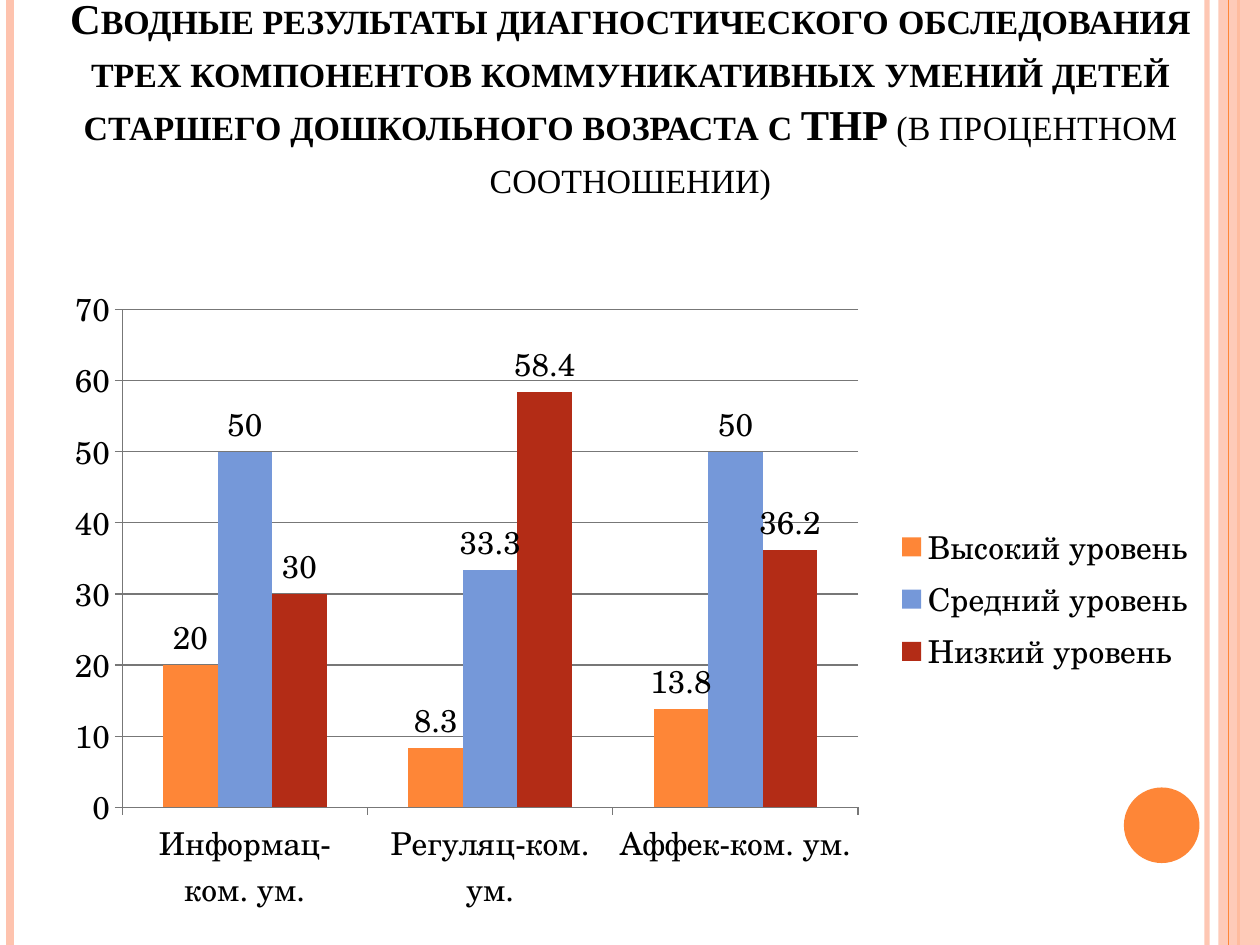
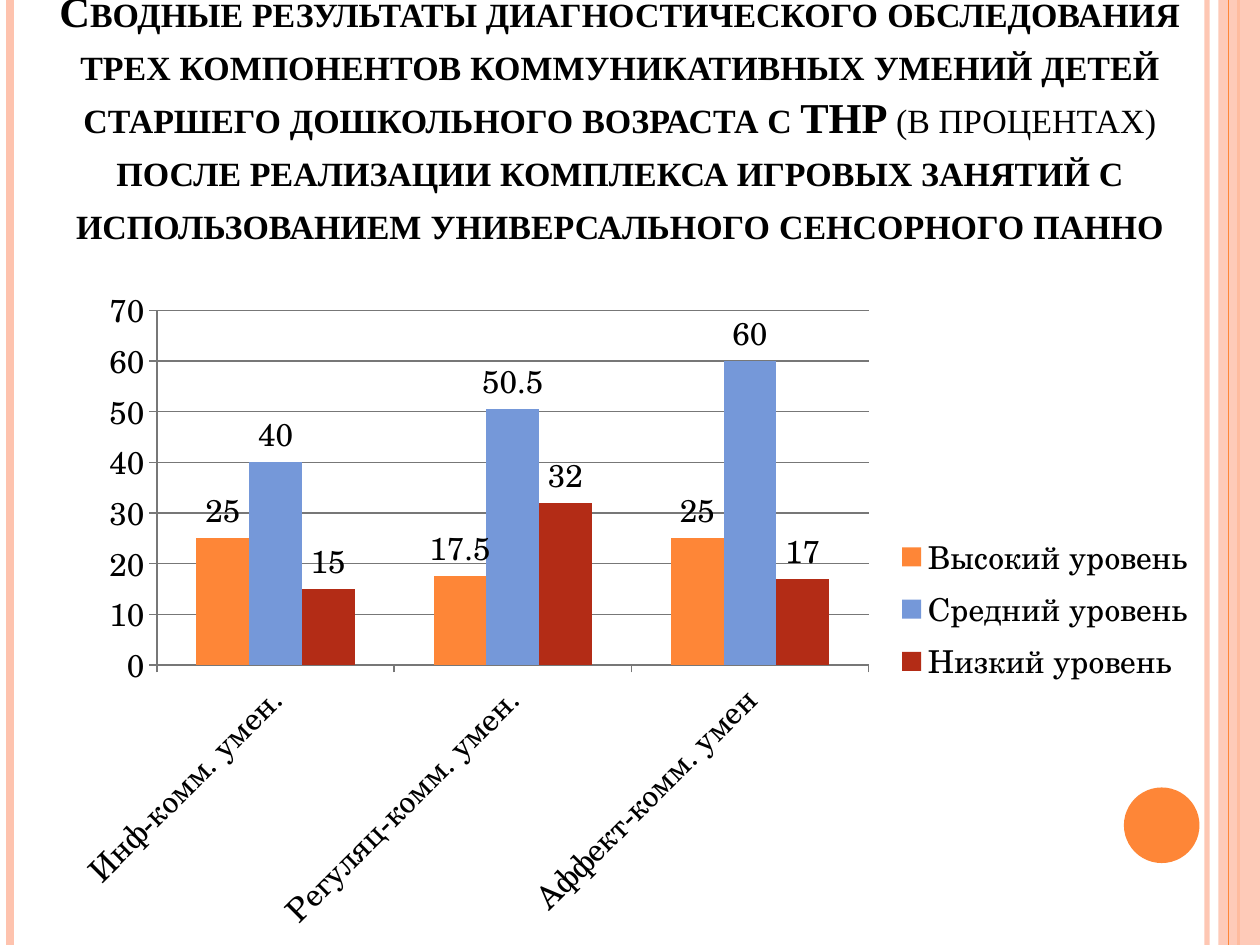
from lxml.etree import SubElement
from pptx import Presentation
from pptx.chart.data import CategoryChartData
from pptx.dml.color import RGBColor
from pptx.enum.chart import XL_CHART_TYPE as ChartType
from pptx.enum.chart import XL_LABEL_POSITION as LabelPosition
from pptx.enum.chart import XL_LEGEND_POSITION as LegendPosition
from pptx.enum.chart import XL_TICK_MARK as TickMark
from pptx.enum.shapes import MSO_CONNECTOR as Connector
from pptx.enum.shapes import MSO_SHAPE as Shape
from pptx.enum.text import MSO_ANCHOR as Anchor
from pptx.enum.text import PP_ALIGN as Align
from pptx.oxml import parse_xml
from pptx.oxml.ns import nsdecls, qn
from pptx.util import Inches, Pt

ORANGE, PEACH, BLUE, RED = "FE8637", "FEC3AE", "7598D9", "B32C16"
BLACK, GREY = "000000", "777777"
TITLE_FONT, CHART_FONT = "Times New Roman", "TeX Gyre Schola"
LEVELS = {"Высокий уровень": ORANGE, "Средний уровень": BLUE, "Низкий уровень": RED}
TITLE_START = (
    "Сводные результаты диагностического обследования трех компонентов "
    "коммуникативных умений детей старшего дошкольного возраста с ТНР "
)


def color(value):
    return RGBColor.from_string(value)


def set_alpha(fill_holder, percent):
    for node in fill_holder.iter(qn("a:srgbClr")):
        SubElement(node, qn("a:alpha"), val=str(percent * 1000))


class Deck:
    def __init__(self):
        self.presentation = Presentation()
        self.presentation.slide_width = Inches(10)
        self.presentation.slide_height = Inches(7.5)
        self.slide = None

    def add_slide(self):
        self.slide = self.presentation.slides.add_slide(self.presentation.slide_layouts[6])
        self.stripe(9.58, PEACH, 3, 93)
        self.stripe(0.08, PEACH, 4.5)
        self.stripe(9.83, ORANGE, 1.5)
        self.shape(Shape.RECTANGLE, (9.67, 0, 0.33, 7.5), PEACH, 87)
        self.stripe(9.75, ORANGE, 0.75)
        self.shape(Shape.OVAL, (8.92, 6.25, 0.6, 0.6), ORANGE)

    def stripe(self, x, line_color, width, alpha=100):
        line = self.slide.shapes.add_connector(
            Connector.STRAIGHT, Inches(x), Inches(0), Inches(x), Inches(7.5))
        line.line.color.rgb = color(line_color)
        line.line.width = Pt(width)
        properties = line._element.spPr
        if alpha < 100:
            set_alpha(properties, alpha)
        SubElement(properties, qn("a:effectLst"))

    def shape(self, kind, box, fill_color, alpha=100):
        shape = self.slide.shapes.add_shape(kind, *map(Inches, box))
        shape.shadow.inherit = False
        shape.fill.solid()
        shape.fill.fore_color.rgb = color(fill_color)
        shape.line.fill.background()
        if alpha < 100:
            set_alpha(shape._element.spPr, alpha)

    def title(self, box, parts):
        text_frame = self.slide.shapes.add_textbox(*map(Inches, box)).text_frame
        text_frame.word_wrap = True
        text_frame.vertical_anchor = Anchor.BOTTOM
        text_frame.margin_bottom = Inches(0.48)
        paragraph = text_frame.paragraphs[0]
        paragraph.alignment = Align.CENTER
        paragraph.line_spacing = 1.04
        for text, bold in parts:
            run = paragraph.add_run()
            run.text = text
            run.font.name = TITLE_FONT
            run.font.size = Pt(24.3)
            run.font.bold = bold
            run.font.color.rgb = color(BLACK)
            run._r.get_or_add_rPr().set("cap", "small")

    def style_font(self, font):
        font.name = CHART_FONT
        font.size = Pt(18)
        font.color.rgb = color(BLACK)

    def chart(self, box, categories, rows, plot_area, label_angle):
        data = CategoryChartData()
        data.categories = categories
        for name, values in zip(LEVELS, rows):
            data.add_series(name, values)
        chart = self.slide.shapes.add_chart(
            ChartType.COLUMN_CLUSTERED, *map(Inches, box), data).chart
        self.style_font(chart.font)
        chart.has_title = False
        chart.has_legend = True
        chart.legend.position = LegendPosition.RIGHT
        chart.legend.include_in_layout = False
        self.style_font(chart.legend.font)

        plot = chart.plots[0]
        plot.gap_width = 150
        plot.overlap = 0
        plot.vary_by_categories = False
        for series, fill_color in zip(plot.series, LEVELS.values()):
            series.format.fill.solid()
            series.format.fill.fore_color.rgb = color(fill_color)
            labels = series.data_labels
            labels.show_value = True
            labels.position = LabelPosition.OUTSIDE_END
            self.style_font(labels.font)

        for axis in (chart.category_axis, chart.value_axis):
            axis.major_tick_mark = TickMark.OUTSIDE
            axis.minor_tick_mark = TickMark.NONE
            axis.format.line.color.rgb = color(GREY)
            self.style_font(axis.tick_labels.font)
        chart.value_axis.minimum_scale = 0
        chart.value_axis.maximum_scale = 70
        chart.value_axis.major_unit = 10
        chart.value_axis.has_major_gridlines = True
        chart.value_axis.major_gridlines.format.line.color.rgb = color(GREY)

        body = chart._chartSpace.xpath("c:chart/c:plotArea/c:catAx/c:txPr/a:bodyPr")[0]
        body.set("rot", str(label_angle * 60000))
        self.place_plot(chart, plot_area)

    def place_plot(self, chart, plot_area):
        area = chart._chartSpace.xpath("c:chart/c:plotArea")[0]
        for layout in area.findall(qn("c:layout")):
            area.remove(layout)
        modes = '<c:xMode val="edge"/><c:yMode val="edge"/>'
        sizes = "".join(f'<c:{key} val="{value}"/>' for key, value in zip("xywh", plot_area))
        area.insert(0, parse_xml(
            f'<c:layout {nsdecls("c")}><c:manualLayout><c:layoutTarget val="inner"/>'
            f"{modes}{sizes}</c:manualLayout></c:layout>"))


def main():
    deck = Deck()

    deck.add_slide()
    deck.title((0.42, 1, 9.17, 1.08),
               [(TITLE_START, True), ("(в процентном соотношении)", False)])
    deck.chart((0.42, 2.17, 9.17, 5.17),
               ["Информац-ком. ум.", "Регуляц-ком. ум.", "Аффек-ком. ум."],
               [(20, 8.3, 13.8), (50, 33.3, 50), (30, 58.4, 36.2)],
               (0.06, 0.055, 0.637, 0.765), 0)

    deck.add_slide()
    deck.title((0.17, 0.17, 9.5, 2.28),
               [(TITLE_START, True), ("(в процентах) ", False),
                ("после реализации комплекса игровых занятий с использованием "
                 "универсального сенсорного панно", True)])
    deck.chart((0.42, 2.17, 9.17, 5.33),
               ["Инф-комм. умен.", "Регуляц-комм. умен.", "Аффект-комм. умен"],
               [(25, 17.5, 25), (40, 50.5, 60), (15, 32, 17)],
               (0.09, 0.055, 0.616, 0.528), -45)

    deck.presentation.save("out.pptx")


if __name__ == "__main__":
    main()
